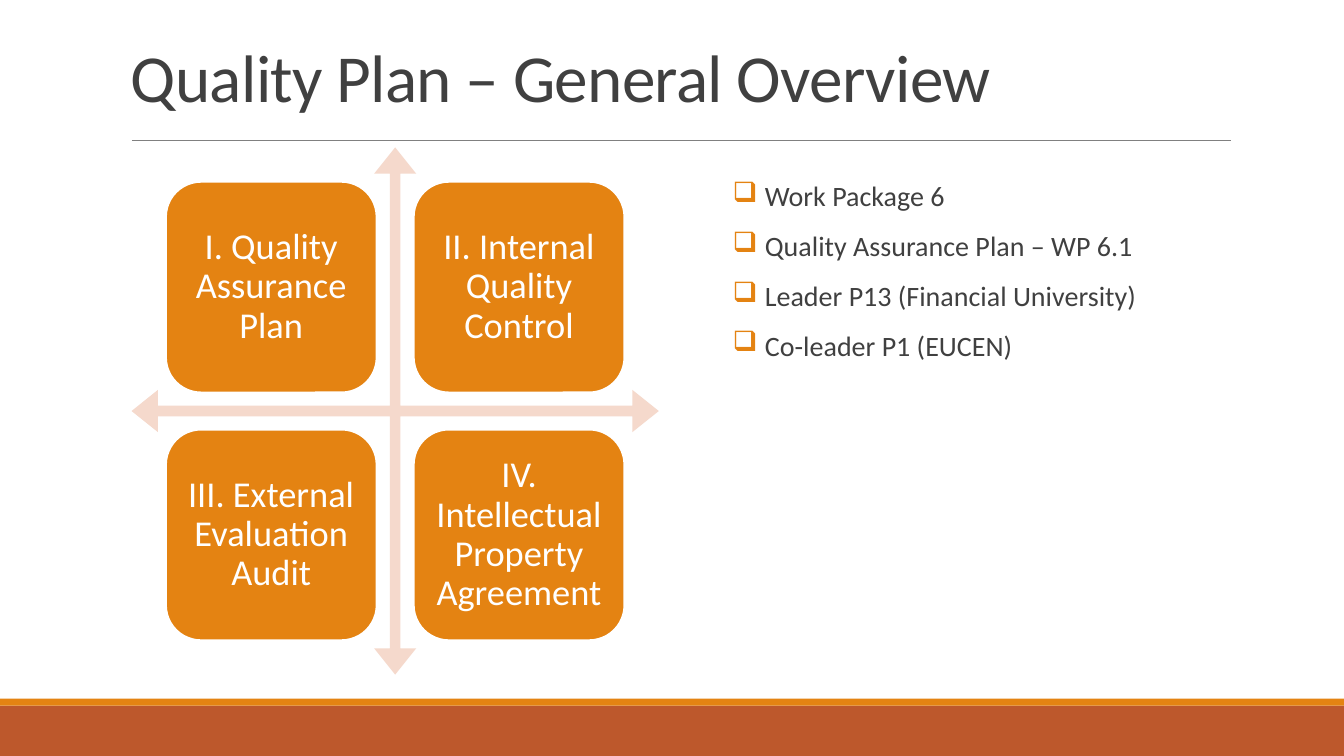
from dataclasses import dataclass
from itertools import product
from typing import NamedTuple

from lxml import etree
from pptx import Presentation
from pptx import util as u
from pptx.dml.color import RGBColor
from pptx.enum import shapes, text
from pptx.oxml import ns


@dataclass(frozen=True)
class Theme:
    face: str = "Calibri"
    ink: str = "404040"
    white: str = "FFFFFF"
    orange: str = "E48312"
    rust: str = "BD582C"
    blush: str = "F5D9CC"
    gray: str = "808080"
    title: float = 48
    card: float = 26
    body: float = 20


class Box(NamedTuple):
    left: float
    top: float
    width: float
    height: float


class Band(NamedTuple):
    box: Box
    color: str


THEME = Theme()
KIND = shapes.MSO_SHAPE
WIDE, HIGH = 960, 540

BANDS = [
    Band(Box(0, 504, WIDE, 36), THEME.rust),
    Band(Box(0, 499, WIDE, 5), THEME.orange),
]
CROSS = Box(94, 105.3, 376.6, 376.6)
CARD, PITCH = 150.4, 177
CARDS = [
    "I. Quality Assurance Plan",
    "II. Internal Quality Control",
    "III. External Evaluation Audit",
    "IV. Intellectual Property Agreement",
]
POINTS = [
    "Work Package 6",
    "Quality Assurance Plan – WP 6.1",
    "Leader P13 (Financial University)",
    "Co-leader P1 (EUCEN)",
]


def rgb(color: str) -> RGBColor:
    return RGBColor.from_string(color)


def place(box: Box) -> list[u.Pt]:
    return [u.Pt(side) for side in box]


def add_form(slide, kind, box: Box, color: str):
    """Add a filled preset shape with no line or shadow."""
    form = slide.shapes.add_shape(kind, *place(box))
    form.shadow.inherit = False
    form.fill.solid()
    form.fill.fore_color.rgb = rgb(color)
    form.line.fill.background()
    return form


def set_frame(frame, anchor, side: float, end: float) -> None:
    """Wrap the text and set its anchor, side insets and end insets."""
    frame.word_wrap = True
    frame.vertical_anchor = anchor
    frame.margin_left = frame.margin_right = u.Pt(side)
    frame.margin_top = frame.margin_bottom = u.Pt(end)


def set_font(para, size: float, color: str) -> None:
    para.font.name = THEME.face
    para.font.size = u.Pt(size)
    para.font.color.rgb = rgb(color)


def add_rule(slide) -> None:
    rule = slide.shapes.add_connector(
        shapes.MSO_CONNECTOR.STRAIGHT, u.Pt(94.3), u.Pt(100), u.Pt(879), u.Pt(100))
    rule.line.color.rgb = rgb(THEME.gray)
    rule.line.width = u.Pt(0.5)
    etree.SubElement(rule._element.spPr, ns.qn("a:effectLst"))


def add_title(slide, words: str) -> None:
    frame = slide.shapes.add_textbox(*place(Box(86.4, 22.3, 792, 64.1))).text_frame
    set_frame(frame, text.MSO_ANCHOR.BOTTOM, 7.2, 3.6)
    para = frame.paragraphs[0]
    run = para.add_run()
    run.text = words
    run._r.get_or_add_rPr().set("spc", "-50")
    para.line_spacing = 0.85
    set_font(para, THEME.title, THEME.ink)


def add_cross(slide) -> None:
    cross = add_form(slide, KIND.QUAD_ARROW, CROSS, THEME.blush)
    for index, share in enumerate((0.02, 0.04, 0.05)):
        cross.adjustments[index] = share


def add_card(slide, box: Box, words: str) -> None:
    card = add_form(slide, KIND.ROUNDED_RECTANGLE, box, THEME.orange)
    card.line.color.rgb = rgb(THEME.white)
    card.line.width = u.Pt(1.25)
    set_frame(card.text_frame, text.MSO_ANCHOR.MIDDLE, 7.8, 7.8)
    para = card.text_frame.paragraphs[0]
    para.text = words
    para.alignment = text.PP_ALIGN.CENTER
    para.line_spacing = 0.9
    set_font(para, THEME.card, THEME.white)


def add_cards(slide) -> None:
    """Centre the two-by-two grid of cards on the cross."""
    inset = (CROSS.width - PITCH - CARD) / 2
    for words, (row, col) in zip(CARDS, product(range(2), repeat=2)):
        left = CROSS.left + inset + col * PITCH
        top = CROSS.top + inset + row * PITCH
        add_card(slide, Box(left, top, CARD, CARD), words)


def set_bullet(para, hang: float) -> None:
    props = para._p.get_or_add_pPr()
    props.set("marL", str(u.Pt(hang)))
    props.set("indent", str(-u.Pt(hang)))
    tint = etree.SubElement(props, ns.qn("a:buClr"))
    etree.SubElement(tint, ns.qn("a:srgbClr")).set("val", THEME.orange)
    etree.SubElement(props, ns.qn("a:buChar")).set("char", "❑")


def add_points(slide) -> None:
    frame = slide.shapes.add_textbox(*place(Box(523.4, 126.7, 355, 316.8))).text_frame
    set_frame(frame, text.MSO_ANCHOR.TOP, 0, 3.6)
    for index, words in enumerate(POINTS):
        para = frame.add_paragraph() if index else frame.paragraphs[0]
        para.text = words
        para.line_spacing = 0.9
        para.space_before = u.Pt(12 if index else 0)
        para.space_after = u.Pt(2)
        set_bullet(para, 23)
        set_font(para, THEME.body, THEME.ink)


def main() -> None:
    deck = Presentation()
    deck.slide_width, deck.slide_height = u.Pt(WIDE), u.Pt(HIGH)
    slide = deck.slides.add_slide(deck.slide_layouts[6])
    for band in BANDS:
        add_form(slide, KIND.RECTANGLE, band.box, band.color)
    add_rule(slide)
    add_title(slide, "Quality Plan – General Overview")
    add_cross(slide)
    add_cards(slide)
    add_points(slide)
    deck.save("out.pptx")


if __name__ == "__main__":
    main()
